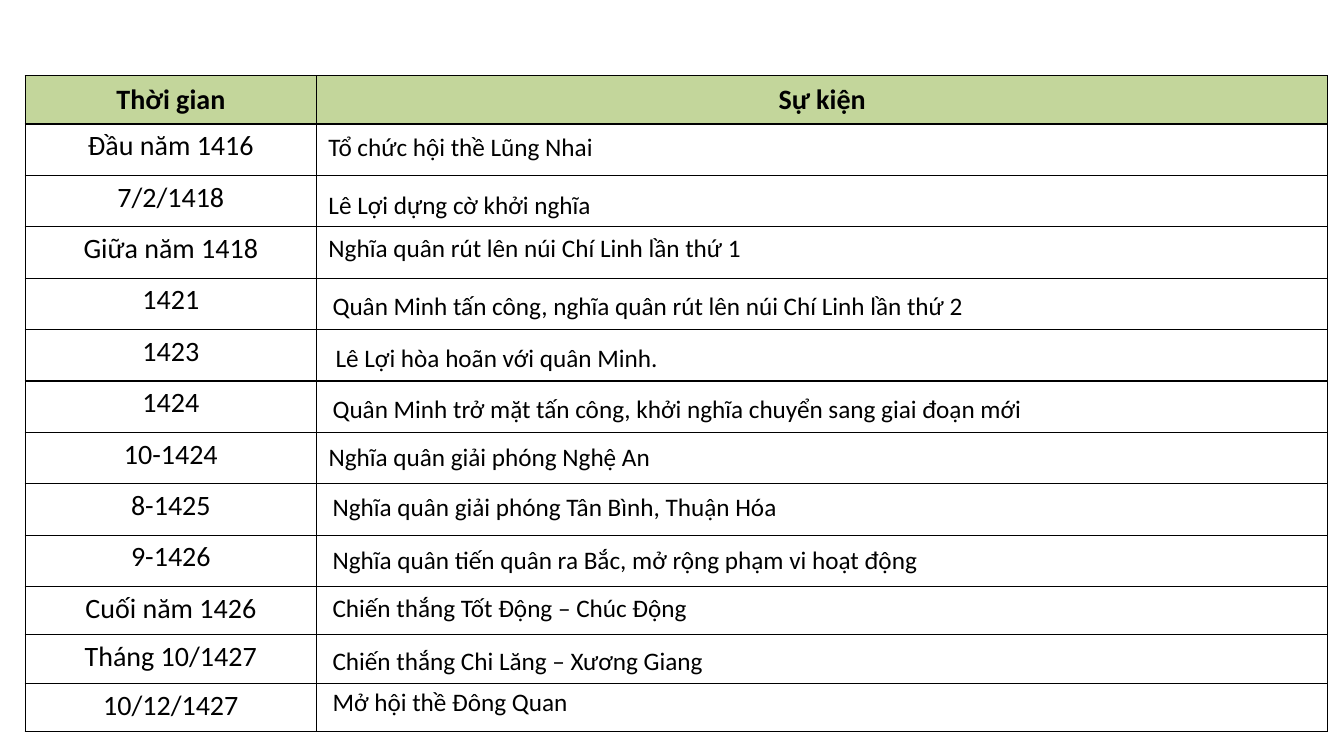
from dataclasses import dataclass

from lxml.etree import SubElement
from pptx import Presentation
from pptx.dml.color import RGBColor
from pptx.enum.text import MSO_ANCHOR, MSO_AUTO_SIZE, PP_ALIGN
from pptx.oxml.ns import qn
from pptx.slide import Slide
from pptx.table import _Cell
from pptx.text.text import TextFrame
from pptx.util import Emu, Pt


@dataclass(frozen=True)
class Theme:
    font: str = "Calibri"
    text: str = "000000"
    header_fill: str = "C3D69B"
    border: str = "000000"
    border_width: int = Pt(1)
    date_size: int = 20
    event_size: int = 18


@dataclass(frozen=True)
class Event:
    date: str
    text: str
    left: int
    top: int
    width: int
    height: int = 40
    wrap: bool = False


THEME = Theme()
PX = 9144  # EMU per px, 100 px to the inch
TABLE_LEFT, TABLE_TOP = 25, 75
COLUMNS = (289, 1003)
SHORT_ROW, TALL_ROW = 48, 51
HEADERS = ("Thời gian", "Sự kiện")

EVENTS = (
    Event("Đầu năm 1416", "Tổ chức hội thề Lũng Nhai", 316, 125, 1000, wrap=True),
    Event("7/2/1418", "Lê Lợi dựng cờ khởi nghĩa", 316, 183, 1000, wrap=True),
    Event("Giữa năm 1418", "Nghĩa quân rút lên núi Chí Linh lần thứ 1", 316, 226, 440),
    Event("1421", "Quân Minh tấn công, nghĩa quân rút lên núi Chí Linh lần thứ 2",
          320, 283, 655),
    Event("1423", "Lê Lợi hòa hoãn với quân Minh.", 323, 335, 349),
    Event("1424", "Quân Minh trở mặt tấn công, khởi nghĩa chuyển sang giai đoạn mới",
          320, 385, 705),
    Event("10-1424", "Nghĩa quân giải phóng Nghệ An", 316, 433, 348),
    Event("8-1425", "Nghĩa quân giải phóng Tân Bình, Thuận Hóa", 320, 483, 476),
    Event("9-1426", "Nghĩa quân tiến quân ra Bắc, mở rộng phạm vi hoạt động",
          320, 535, 608),
    Event("Cuối năm 1426", "Chiến thắng Tốt Động – Chúc Động", 320, 583, 846, 42, True),
    Event("Tháng 10/1427", "Chiến thắng Chi Lăng – Xương Giang", 320, 635, 988, wrap=True),
    Event("10/12/1427", "Mở hội thề Đông Quan", 320, 676, 997, wrap=True),
)
ROWS = (SHORT_ROW,) + (TALL_ROW,) * 9 + (SHORT_ROW,) * 3


def px(n: int) -> Emu:
    return Emu(n * PX)


def write(tf: TextFrame, text: str, size: int, align: PP_ALIGN, bold: bool = False) -> None:
    p = tf.paragraphs[0]
    p.alignment = align
    r = p.add_run()
    r.text = text
    for name, value in {"name": THEME.font, "size": Pt(size), "bold": bold}.items():
        setattr(r.font, name, value)
    r.font.color.rgb = RGBColor.from_string(THEME.text)


def add_borders(cell: _Cell) -> None:
    tc_pr = cell._tc.get_or_add_tcPr()
    for i, side in enumerate(("a:lnL", "a:lnR", "a:lnT", "a:lnB")):
        ln = tc_pr.makeelement(qn(side), {"w": str(THEME.border_width)})
        fill = SubElement(ln, qn("a:solidFill"))
        SubElement(fill, qn("a:srgbClr"), {"val": THEME.border})
        tc_pr.insert(i, ln)  # borders come before the fill


def add_timeline(s: Slide) -> None:
    frame = s.shapes.add_table(len(ROWS), len(COLUMNS), px(TABLE_LEFT), px(TABLE_TOP),
                               px(sum(COLUMNS)), px(sum(ROWS)))
    table = frame.table
    table.first_row = table.horz_banding = False
    for column, width in zip(table.columns, COLUMNS):
        column.width = px(width)
    for row, height in zip(table.rows, ROWS):
        row.height = px(height)
    for cell in table.iter_cells():
        cell.fill.background()
        add_borders(cell)

    # Header row
    for cell, text in zip(table.rows[0].cells, HEADERS):
        cell.fill.solid()
        cell.fill.fore_color.rgb = RGBColor.from_string(THEME.header_fill)
        cell.vertical_anchor = MSO_ANCHOR.MIDDLE
        write(cell.text_frame, text, THEME.date_size, PP_ALIGN.CENTER, bold=True)

    # Date column
    for i, event in enumerate(EVENTS, start=1):
        write(table.cell(i, 0).text_frame, event.date, THEME.date_size, PP_ALIGN.CENTER)


def add_event(s: Slide, event: Event) -> None:
    box = s.shapes.add_textbox(px(event.left), px(event.top),
                               px(event.width), px(event.height))
    tf = box.text_frame
    tf.word_wrap = event.wrap
    tf.auto_size = MSO_AUTO_SIZE.SHAPE_TO_FIT_TEXT
    write(tf, event.text, THEME.event_size, PP_ALIGN.LEFT)


def main() -> None:
    prs = Presentation()
    prs.slide_width, prs.slide_height = px(1333), px(750)
    s = prs.slides.add_slide(prs.slide_layouts[6])
    add_timeline(s)
    for event in EVENTS:
        add_event(s, event)
    prs.save("out.pptx")


if __name__ == "__main__":
    main()
